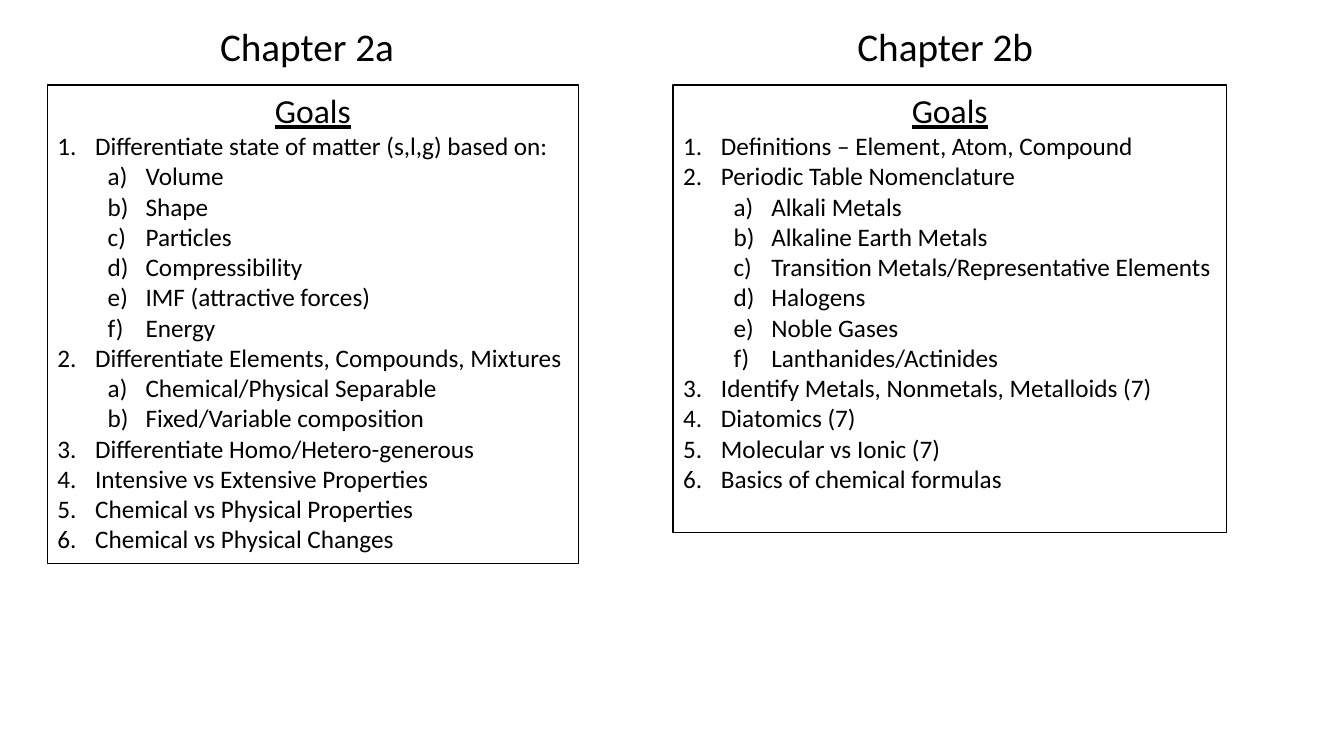
from dataclasses import dataclass

from lxml import etree
from pptx import Presentation
from pptx.dml.color import RGBColor
from pptx.enum.text import MSO_ANCHOR, MSO_AUTO_SIZE, PP_ALIGN
from pptx.oxml.ns import qn
from pptx.text.text import TextFrame, _Paragraph
from pptx.util import Emu, Pt

EMU_PER_PX = 9525
COMPARISON_LAYOUT = 4
LEFT, CENTER = PP_ALIGN.LEFT, PP_ALIGN.CENTER
TOP = MSO_ANCHOR.TOP
NO_AUTOFIT = MSO_AUTO_SIZE.NONE

# Geometry shared by both chapters, in px
HEADING_TOP, HEADING_HEIGHT = 16, 55
GOALS_TOP = 81
HANGING, LEVEL_STEP = 36, 48
NUMBERING = ("arabicPeriod", "alphaLcParenR")


@dataclass(frozen=True)
class Theme:
    font: str = "Calibri"
    ink: RGBColor = RGBColor(0, 0, 0)
    paper: RGBColor = RGBColor(255, 255, 255)
    heading_size: int = 28
    goals_size: int = 24
    item_size: int = 18
    border: int = 1


@dataclass(frozen=True)
class Goal:
    text: str
    subgoals: tuple[str, ...] = ()


@dataclass(frozen=True)
class Chapter:
    heading: str
    heading_idx: int
    heading_left: int
    heading_width: int
    goals_idx: int
    goals_left: int
    goals_width: int
    goals_height: int
    goals: tuple[Goal, ...]


THEME = Theme()

CHAPTERS = (
    Chapter("Chapter 2a", 0, 200, 187, 2, 45, 506, 456, (
        Goal("Differentiate state of matter (s,l,g) based on:",
             ("Volume", "Shape", "Particles", "Compressibility",
              "IMF (attractive forces)", "Energy")),
        Goal("Differentiate Elements, Compounds, Mixtures",
             ("Chemical/Physical Separable", "Fixed/Variable composition")),
        Goal("Differentiate Homo/Hetero-generous"),
        Goal("Intensive vs Extensive Properties"),
        Goal("Chemical vs Physical Properties"),
        Goal("Chemical vs Physical Changes"),
    )),
    Chapter("Chapter 2b", 3, 807, 188, 4, 641, 527, 426, (
        Goal("Definitions – Element, Atom, Compound"),
        Goal("Periodic Table Nomenclature",
             ("Alkali Metals", "Alkaline Earth Metals",
              "Transition Metals/Representative Elements", "Halogens",
              "Noble Gases", "Lanthanides/Actinides")),
        Goal("Identify Metals, Nonmetals, Metalloids (7)"),
        Goal("Diatomics (7)"),
        Goal("Molecular vs Ionic (7)"),
        Goal("Basics of chemical formulas"),
    )),
)


def px(length: int) -> Emu:
    return Emu(length * EMU_PER_PX)


def place(holder, left: int, top: int, width: int, height: int) -> TextFrame:
    """Move a placeholder and return its text frame, ready for writing."""
    holder.left, holder.top = px(left), px(top)
    holder.width, holder.height = px(width), px(height)
    frame = holder.text_frame
    frame.auto_size = NO_AUTOFIT
    frame.word_wrap = True
    frame.vertical_anchor = TOP
    return frame


def write(paragraph: _Paragraph, text: str, *, size: int,
          align: PP_ALIGN = LEFT, underline: bool = False,
          level: int = 0, numbered: bool = False) -> None:
    paragraph.level = level
    paragraph.alignment = align
    paragraph.line_spacing = 1.0
    paragraph.space_before = paragraph.space_after = Pt(0)
    run = paragraph.add_run()
    run.text = text
    run.font.name = THEME.font
    run.font.size = Pt(size)
    run.font.bold = False
    run.font.underline = underline
    run.font.color.rgb = THEME.ink

    # Numbers and hanging indents
    properties = paragraph._p.get_or_add_pPr()
    indent = HANGING if numbered else 0
    properties.set("marL", str(px(indent + level * LEVEL_STEP)))
    properties.set("indent", str(px(-indent)))
    if numbered:
        etree.SubElement(properties, qn("a:buFont"), typeface=THEME.font)
        etree.SubElement(properties, qn("a:buAutoNum"), type=NUMBERING[level])
    else:
        etree.SubElement(properties, qn("a:buNone"))


def draw_chapter(slide, chapter: Chapter) -> None:
    holders = {h.placeholder_format.idx: h for h in slide.placeholders}

    # Chapter heading
    heading = place(holders[chapter.heading_idx], chapter.heading_left,
                    HEADING_TOP, chapter.heading_width, HEADING_HEIGHT)
    write(heading.paragraphs[0], chapter.heading, size=THEME.heading_size)

    # Framed goals
    goals_box = holders[chapter.goals_idx]
    goals = place(goals_box, chapter.goals_left, GOALS_TOP,
                  chapter.goals_width, chapter.goals_height)
    goals_box.fill.solid()
    goals_box.fill.fore_color.rgb = THEME.paper
    goals_box.line.color.rgb = THEME.ink
    goals_box.line.width = Pt(THEME.border)
    write(goals.paragraphs[0], "Goals", size=THEME.goals_size,
          align=CENTER, underline=True)
    for goal in chapter.goals:
        write(goals.add_paragraph(), goal.text, size=THEME.item_size,
              numbered=True)
        for subgoal in goal.subgoals:
            write(goals.add_paragraph(), subgoal, size=THEME.item_size,
                  level=1, numbered=True)


def main() -> None:
    presentation = Presentation()
    presentation.slide_width, presentation.slide_height = px(1280), px(720)
    layout = presentation.slide_layouts[COMPARISON_LAYOUT]
    slide = presentation.slides.add_slide(layout)
    for chapter in CHAPTERS:
        draw_chapter(slide, chapter)

    # Unused placeholders
    for holder in list(slide.placeholders):
        if not holder.text_frame.text:
            holder.element.getparent().remove(holder.element)
    presentation.save("out.pptx")


if __name__ == "__main__":
    main()
